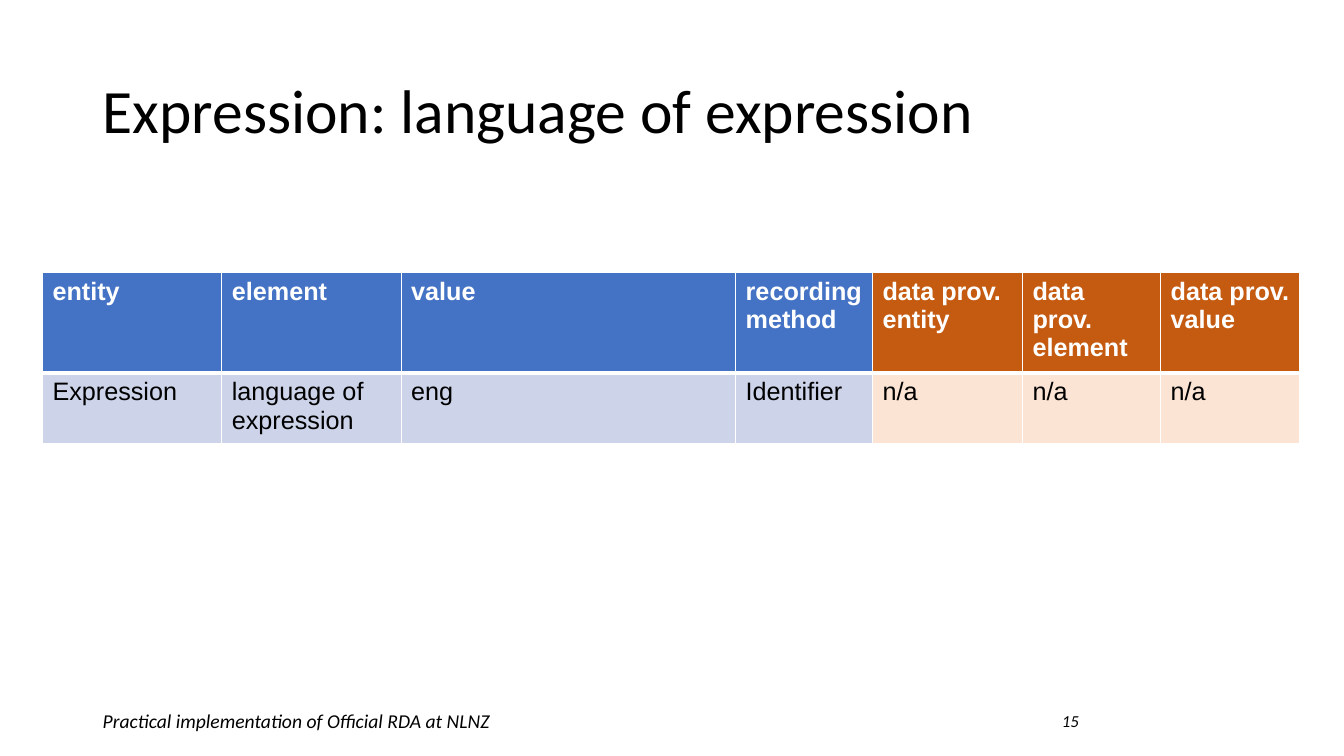
from dataclasses import dataclass

from lxml import etree
from pptx import Presentation
from pptx import util as u
from pptx.dml.color import RGBColor
from pptx.enum import text
from pptx.oxml import ns


@dataclass(frozen=True)
class Theme:
    """Colours, fonts and type sizes of the slide."""
    ink: str = "000000"
    paper: str = "FFFFFF"
    head: str = "4472C4"
    body: str = "CDD4EA"
    prov_head: str = "C55A11"
    prov_body: str = "FBE4D4"
    heading_font: str = "Calibri"
    table_font: str = "Arial"
    title: int = 44
    table: int = 18
    footer: int = 14
    number: int = 12
    rule: int = 1
    head_rule: int = 3


class Deck:
    """Holds the theme and the current slide."""

    def __init__(self, theme):
        self.theme = theme
        self.prs = Presentation()
        self.prs.slide_width, self.prs.slide_height = u.Cm(33.87), u.Cm(19.05)
        self.slide = self.prs.slides.add_slide(self.prs.slide_layouts[6])

    def font(self, p, name, size, color, bold=False, italic=False):
        """Set the font of a paragraph."""
        f = p.font
        f.name, f.size, f.bold, f.italic = name, u.Pt(size), bold, italic
        f.color.rgb = RGBColor.from_string(color)

    def label(self, words, box, size, align=text.PP_ALIGN.LEFT,
              anchor=text.MSO_ANCHOR.MIDDLE, italic=False, spacing=1.0):
        """Add a wrapped text box with one paragraph."""
        sp = self.slide.shapes.add_textbox(*map(u.Cm, box))
        tf = sp.text_frame
        tf.word_wrap, tf.vertical_anchor = True, anchor
        p = tf.paragraphs[0]
        p.text, p.alignment, p.line_spacing = words, align, spacing
        self.font(p, self.theme.heading_font, size, self.theme.ink, italic=italic)

    def borders(self, cell, top, bottom):
        """Draw the four sides of a cell in the paper colour."""
        tc_pr = cell._tc.get_or_add_tcPr()
        widths = {"L": self.theme.rule, "R": self.theme.rule, "T": top, "B": bottom}
        for i, (side, width) in enumerate(widths.items()):
            ln = etree.Element(ns.qn(f"a:ln{side}"), w=str(u.Pt(width)))
            fill = etree.SubElement(ln, ns.qn("a:solidFill"))
            etree.SubElement(fill, ns.qn("a:srgbClr"), val=self.theme.paper)
            tc_pr.insert(i, ln)

    def table(self, rows, left, top, widths, heights, prov_start):
        """Add a table whose provenance columns have their own colours."""
        t = self.theme
        frame = self.slide.shapes.add_table(
            len(rows), len(widths), u.Cm(left), u.Cm(top),
            u.Cm(sum(widths)), u.Cm(sum(heights)))
        table = frame.table
        for column, width in zip(table.columns, widths):
            column.width = u.Cm(width)
        for r, (words, height) in enumerate(zip(rows, heights)):
            table.rows[r].height = u.Cm(height)
            is_head = r == 0
            main, prov = (t.head, t.prov_head) if is_head else (t.body, t.prov_body)
            for c, word in enumerate(words):
                cell = table.cell(r, c)
                cell.text = word
                cell.fill.solid()
                cell.fill.fore_color.rgb = RGBColor.from_string(
                    prov if c >= prov_start else main)
                self.font(cell.text_frame.paragraphs[0], t.table_font, t.table,
                          t.paper if is_head else t.ink, bold=is_head)
                self.borders(cell, t.rule if is_head else t.head_rule,
                             t.head_rule if is_head else t.rule)


def main():
    """Build and save the slide."""
    theme = Theme()
    deck = Deck(theme)
    deck.label("Practical implementation of Official RDA at NLNZ",
               (2.34, 17.73, 15.37, 0.86), theme.footer,
               anchor=text.MSO_ANCHOR.TOP, italic=True)
    deck.label("Expression: language of expression",
               (2.34, 1.02, 29.21, 3.68), theme.title, spacing=0.9)
    deck.label("15", (23.93, 17.65, 3.51, 1.02), theme.number,
               align=text.PP_ALIGN.RIGHT, italic=True)
    deck.table(
        [["entity", "element", "value", "recording method",
          "data prov. entity", "data prov. element", "data prov. value"],
         ["Expression", "language of expression", "eng", "Identifier",
          "n/a", "n/a", "n/a"]],
        left=1.07, top=6.86,
        widths=[4.52, 4.52, 8.43, 3.45, 3.78, 3.48, 3.51],
        heights=[2.34, 1.65], prov_start=4)
    deck.prs.save("out.pptx")


if __name__ == "__main__":
    main()
